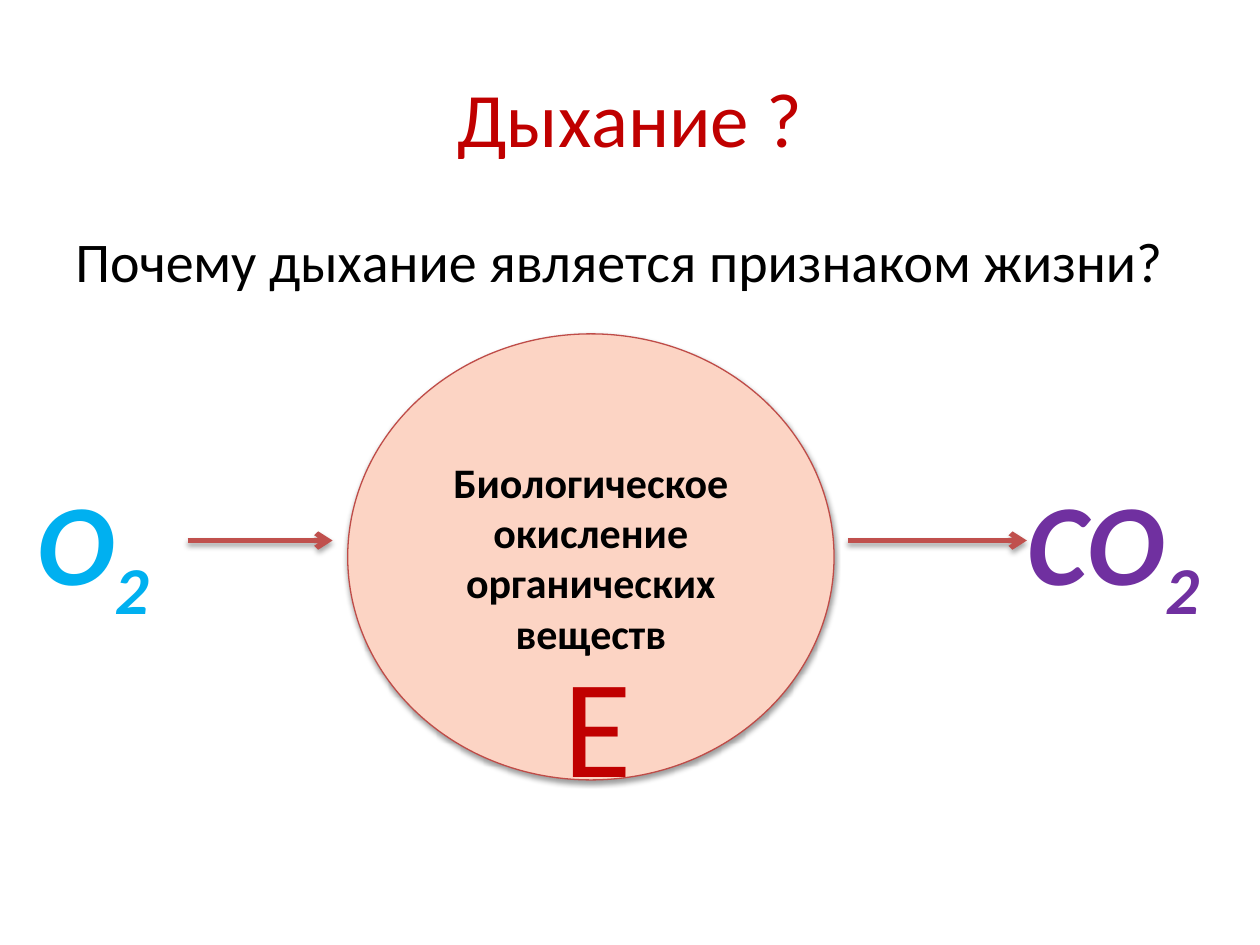
from lxml import etree
from pptx import Presentation
from pptx.dml.color import RGBColor
from pptx.enum.shapes import MSO_CONNECTOR, MSO_SHAPE
from pptx.enum.text import MSO_ANCHOR, MSO_AUTO_SIZE, PP_ALIGN
from pptx.oxml import parse_xml
from pptx.oxml.ns import nsdecls, qn
from pptx.util import Inches, Pt

OVAL, STRAIGHT = MSO_SHAPE.OVAL, MSO_CONNECTOR.STRAIGHT
TOP, MIDDLE = MSO_ANCHOR.TOP, MSO_ANCHOR.MIDDLE
LEFT, CENTER = PP_ALIGN.LEFT, PP_ALIGN.CENTER
GROW = MSO_AUTO_SIZE.SHAPE_TO_FIT_TEXT

THEME = {
    "font": "Calibri",
    "red": RGBColor.from_string("C00000"),
    "black": RGBColor.from_string("000000"),
    "oxygen": RGBColor.from_string("00B0F0"),
    "carbon_dioxide": RGBColor.from_string("7030A0"),
    "arrow": RGBColor.from_string("C0504D"),
    "cell_fill": RGBColor.from_string("FCD4C4"),
    "cell_line": RGBColor.from_string("BF4C48"),
    "title": Pt(44),
    "question": Pt(32),
    "formula": Pt(66),
    "process": Pt(24),
    "energy": Pt(80),
}


def write(shape, parts, size, color, align=LEFT, anchor=TOP, wrap=True, bold=False, italic=False):
    frame = shape.text_frame
    frame.word_wrap = wrap
    frame.vertical_anchor = anchor
    if not wrap:
        frame.auto_size = GROW
    paragraph = frame.paragraphs[0]
    paragraph.alignment = align
    for part in parts:
        run = paragraph.add_run()
        run.text = part
        run.font.name = THEME["font"]
        run.font.size = THEME[size]
        run.font.color.rgb = THEME[color]
        run.font.bold = bold
        run.font.italic = italic
    return paragraph


def add_shadow(shape, opacity, distance):
    properties = shape._element.spPr
    for effects in properties.findall(qn("a:effectLst")):
        properties.remove(effects)
    properties.append(parse_xml(
        f'<a:effectLst {nsdecls("a")}>'
        f'<a:outerShdw blurRad="{Pt(3.1)}" dist="{Pt(distance)}" dir="5400000" rotWithShape="0">'
        f'<a:srgbClr val="{THEME["black"]}"><a:alpha val="{opacity * 1000}"/></a:srgbClr>'
        '</a:outerShdw></a:effectLst>'
    ))


presentation = Presentation()
presentation.slide_width = Inches(10)
presentation.slide_height = Inches(7.5)
slide = presentation.slides.add_slide(presentation.slide_layouts[6])
shapes = slide.shapes

title = shapes.add_textbox(Inches(0.5), Inches(0.3), Inches(9), Inches(1.25))
write(title, ["Дыхание ?"], "title", "red", align=CENTER, anchor=MIDDLE)

question = shapes.add_textbox(Inches(0.5), Inches(1.75), Inches(9), Inches(0.82))
write(question, ["Почему дыхание является признаком жизни?"], "question", "black")

cell = shapes.add_shape(OVAL, Inches(2.76), Inches(2.65), Inches(3.86), Inches(3.54))
cell.fill.solid()
cell.fill.fore_color.rgb = THEME["cell_fill"]
cell.line.color.rgb = THEME["cell_line"]
cell.line.width = Pt(0.75)
add_shadow(cell, 38, 1.6)
write(cell, ["Биологическое окисление органических веществ"], "process", "black",
      align=CENTER, anchor=MIDDLE, bold=True)

for start, end in [(1.49, 2.64), (6.73, 8.15)]:
    arrow = shapes.add_connector(STRAIGHT, Inches(start), Inches(4.29), Inches(end), Inches(4.29))
    arrow.line.color.rgb = THEME["arrow"]
    arrow.line.width = Pt(3)
    etree.SubElement(arrow.line._get_or_add_ln(), qn("a:tailEnd"), type="arrow")
    add_shadow(arrow, 35, 1.8)

for left, width, symbol, color in [(0.2, 1.13, "О", "oxygen"), (8.06, 1.61, "СО", "carbon_dioxide")]:
    formula = shapes.add_textbox(Inches(left), Inches(3.68), Inches(width), Inches(1.21))
    paragraph = write(formula, [symbol, "2"], "formula", color, wrap=False, bold=True, italic=True)
    paragraph.runs[1].font._element.set("baseline", "-25000")

energy = shapes.add_textbox(Inches(4.37), Inches(5.01), Inches(0.75), Inches(1.45))
write(energy, ["Е"], "energy", "red", wrap=False)

presentation.save("out.pptx")
